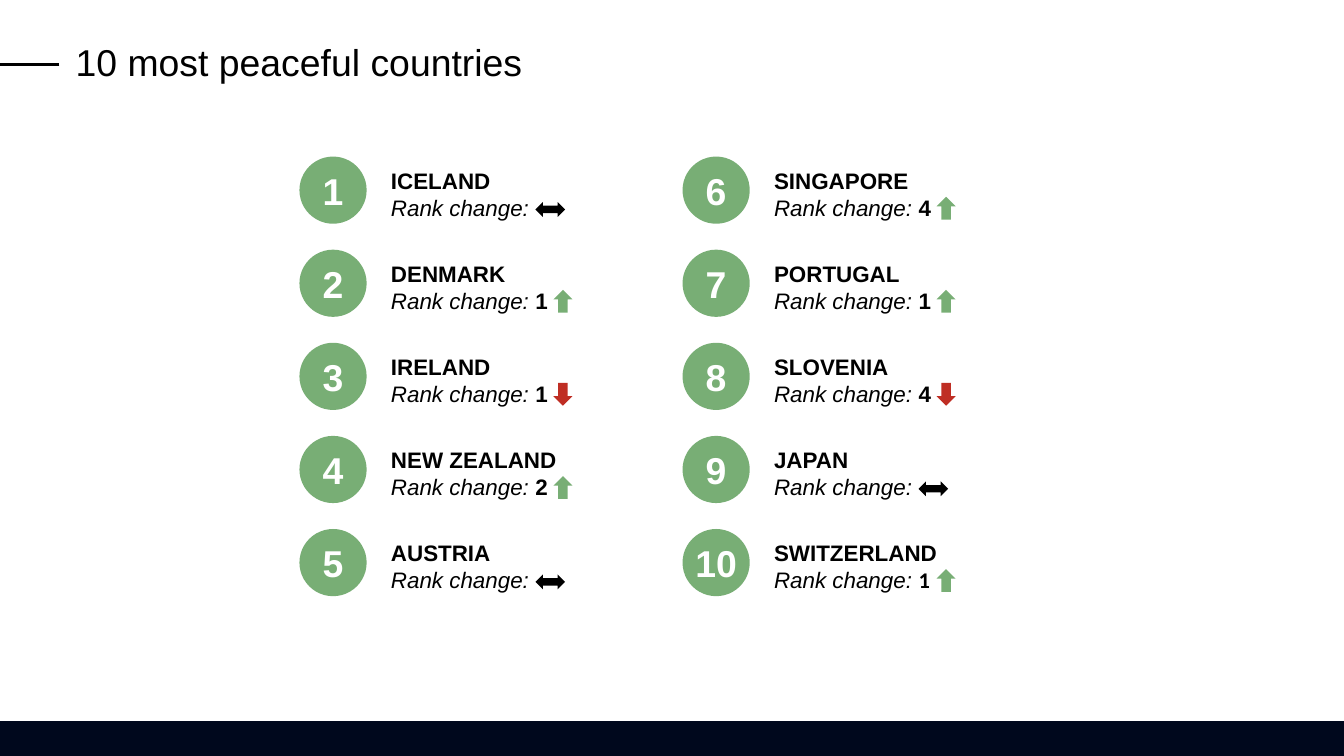
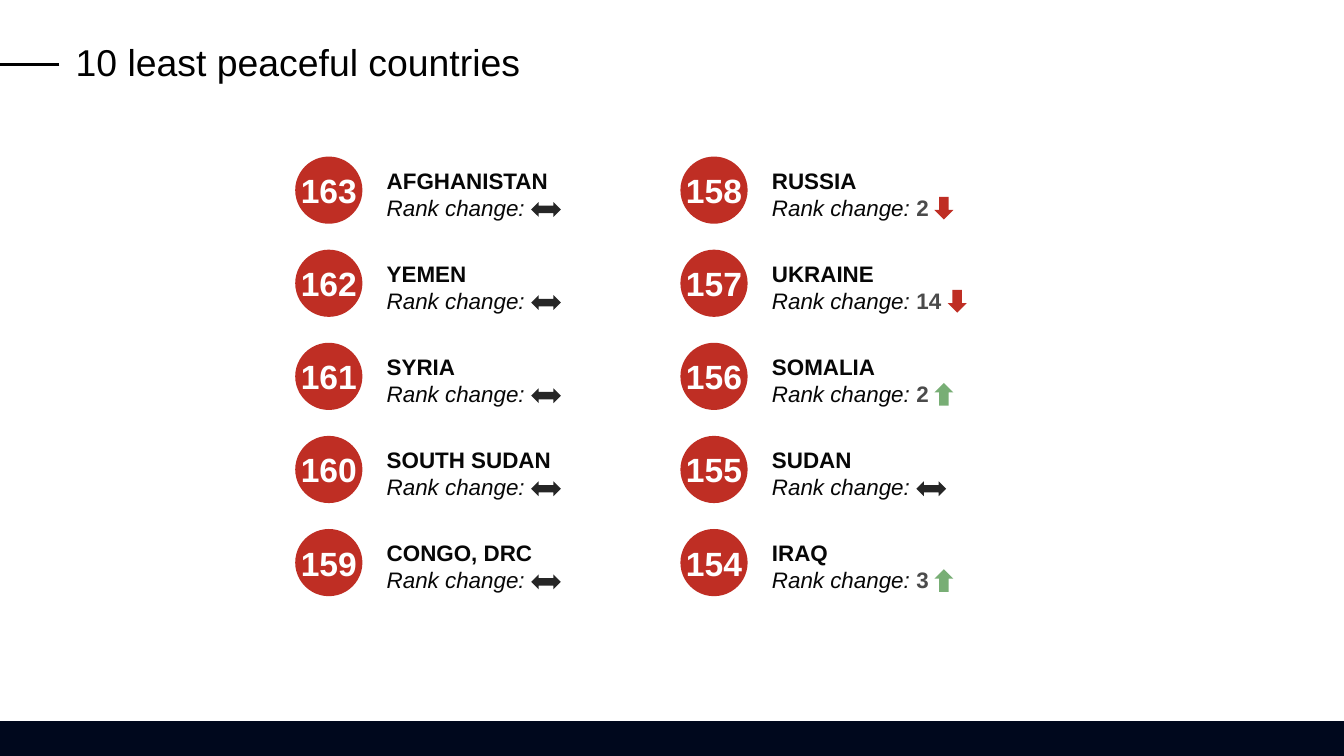
from pptx import Presentation
from pptx.dml.color import RGBColor
from pptx.enum import shapes, text
from pptx.oxml.ns import qn
from pptx.util import Cm, Pt
from lxml import etree

FONT = "Arial"
BLACK = RGBColor(0x00, 0x00, 0x00)
WHITE = RGBColor(0xFF, 0xFF, 0xFF)
NAVY = RGBColor(0x00, 0x08, 0x1D)
GREEN = RGBColor(0x78, 0xAE, 0x75)
RED = RGBColor(0xBF, 0x2E, 0x24)
INK = RGBColor(0x07, 0x07, 0x07)
CHARCOAL = RGBColor(0x26, 0x26, 0x26)
GREY = RGBColor(0x4B, 0x4B, 0x4B)

UP, DOWN, SAME = "up", "down", "same"

RANKINGS = [
    {
        "title": "10 most peaceful countries",
        "circle": GREEN, "number_size": 20,
        "ink": BLACK, "change": BLACK, "same": BLACK,
        "lefts": (5.66, 12.9),
        "columns": [
            [("1", "ICELAND", "", SAME), ("2", "DENMARK", "1", UP),
             ("3", "IRELAND", "1", DOWN), ("4", "NEW ZEALAND", "2", UP),
             ("5", "AUSTRIA", "", SAME)],
            [("6", "SINGAPORE", "4", UP), ("7", "PORTUGAL", "1", UP),
             ("8", "SLOVENIA", "4", DOWN), ("9", "JAPAN", "", SAME),
             ("10", "SWITZERLAND", "1", UP)],
        ],
    },
    {
        "title": "10 least peaceful countries",
        "circle": RED, "number_size": 18,
        "ink": INK, "change": GREY, "same": CHARCOAL,
        "lefts": (5.58, 12.86),
        "columns": [
            [("163", "AFGHANISTAN", "", SAME), ("162", "YEMEN", "", SAME),
             ("161", "SYRIA", "", SAME), ("160", "SOUTH SUDAN", "", SAME),
             ("159", "CONGO, DRC", "", SAME)],
            [("158", "RUSSIA", "2", DOWN), ("157", "UKRAINE", "14", DOWN),
             ("156", "SOMALIA", "2", UP), ("155", "SUDAN", "", SAME),
             ("154", "IRAQ", "3", UP)],
        ],
    },
]
CHANGE_FONTS = {"SWITZERLAND": "Calibri"}

PAGE_WIDTH, PAGE_HEIGHT = 25.4, 14.29
BAND_HEIGHT = 0.66
FIRST_TOP, ROW_PITCH = 2.96, 1.76
CIRCLE = 1.27
LABEL_DX, LABEL_DY, LABEL_WIDTH, LABEL_HEIGHT = 1.55, 0.1, 4.4, 1.22
DIGIT_WIDTH = 0.25
MARKERS = {
    UP: (shapes.MSO_SHAPE.UP_ARROW, 3.25, 0.66, 0.36, 0.43),
    DOWN: (shapes.MSO_SHAPE.DOWN_ARROW, 3.25, 0.66, 0.36, 0.43),
    SAME: (shapes.MSO_SHAPE.LEFT_RIGHT_ARROW, 2.91, 0.76, 0.56, 0.28),
}


def add_filled(parent, kind, left, top, width, height, color):
    shape = parent.add_shape(kind, Cm(left), Cm(top), Cm(width), Cm(height))
    shape.shadow.inherit = False
    shape.fill.solid()
    shape.fill.fore_color.rgb = color
    shape.line.fill.background()
    return shape


def set_insets(frame, side, end):
    frame.margin_left = frame.margin_right = Cm(side)
    frame.margin_top = frame.margin_bottom = Cm(end)


def style(font, size, color, bold=False, italic=False):
    font.name, font.size = FONT, Pt(size)
    font.bold, font.italic = bold, italic
    font.color.rgb = color


def add_number(group, ranking, rank, left, top):
    circle = add_filled(group, shapes.MSO_SHAPE.OVAL, left, top, CIRCLE, CIRCLE,
                        ranking["circle"])
    frame = circle.text_frame
    set_insets(frame, 0, 0)
    frame.word_wrap = False
    frame.vertical_anchor = text.MSO_ANCHOR.MIDDLE
    para = frame.paragraphs[0]
    para.text = rank
    para.alignment = text.PP_ALIGN.CENTER
    style(para.font, ranking["number_size"], WHITE, bold=True)


def add_label(group, ranking, country, change, left, top):
    box = group.add_textbox(Cm(left), Cm(top), Cm(LABEL_WIDTH), Cm(LABEL_HEIGHT))
    frame = box.text_frame
    frame.word_wrap = True
    frame.auto_size = text.MSO_AUTO_SIZE.SHAPE_TO_FIT_TEXT
    set_insets(frame, 0.18, 0.1)
    name = frame.paragraphs[0]
    name.text = country
    style(name.font, 12, ranking["ink"], bold=True)
    para = frame.add_paragraph()
    span = para.add_run()
    span.text = "Rank change: " if change else "Rank change:"
    style(span.font, 12, ranking["ink"], italic=True)
    if change:
        span = para.add_run()
        span.text = change
        style(span.font, 12, ranking["change"], bold=True)
        span.font.name = CHANGE_FONTS.get(country, FONT)


def add_country(page, ranking, entry, left, top):
    rank, country, change, direction = entry
    group = page.shapes.add_group_shape().shapes
    label_left, label_top = left + LABEL_DX, top + LABEL_DY
    add_label(group, ranking, country, change, label_left, label_top)
    add_number(group, ranking, rank, left, top)
    kind, dx, dy, width, height = MARKERS[direction]
    dx += DIGIT_WIDTH * max(len(change) - 1, 0)
    color = {UP: GREEN, DOWN: RED, SAME: ranking["same"]}[direction]
    add_filled(group, kind, label_left + dx, label_top + dy, width, height, color)


def add_page(deck, title_text):
    page = deck.slides.add_slide(deck.slide_layouts[5])
    add_filled(page.shapes, shapes.MSO_SHAPE.RECTANGLE, 0, PAGE_HEIGHT - BAND_HEIGHT,
               PAGE_WIDTH, BAND_HEIGHT, NAVY)
    title = page.shapes.title
    title.left, title.top, title.width, title.height = Cm(1.43), Cm(0.83), Cm(12.07), Cm(0.77)
    frame = title.text_frame
    set_insets(frame, 0, 0)
    frame.word_wrap = True
    frame.auto_size = text.MSO_AUTO_SIZE.NONE
    frame.vertical_anchor = text.MSO_ANCHOR.MIDDLE
    para = frame.paragraphs[0]
    para.text = title_text
    para.alignment = text.PP_ALIGN.LEFT
    para.line_spacing = 0.9
    style(para.font, 20, BLACK)
    rule = page.shapes.add_connector(shapes.MSO_CONNECTOR.STRAIGHT,
                                     Cm(1.12), Cm(1.22), Cm(0), Cm(1.22))
    rule.line.color.rgb = BLACK
    rule.line.width = Pt(1.5)
    etree.SubElement(rule._element.spPr, qn("a:effectLst"))
    return page


def main():
    deck = Presentation()
    deck.slide_width, deck.slide_height = Cm(PAGE_WIDTH), Cm(PAGE_HEIGHT)
    for ranking in RANKINGS:
        page = add_page(deck, ranking["title"])
        for left, column in zip(ranking["lefts"], ranking["columns"]):
            for row, entry in enumerate(column):
                add_country(page, ranking, entry, left, FIRST_TOP + row * ROW_PITCH)
    deck.save("out.pptx")


if __name__ == "__main__":
    main()
